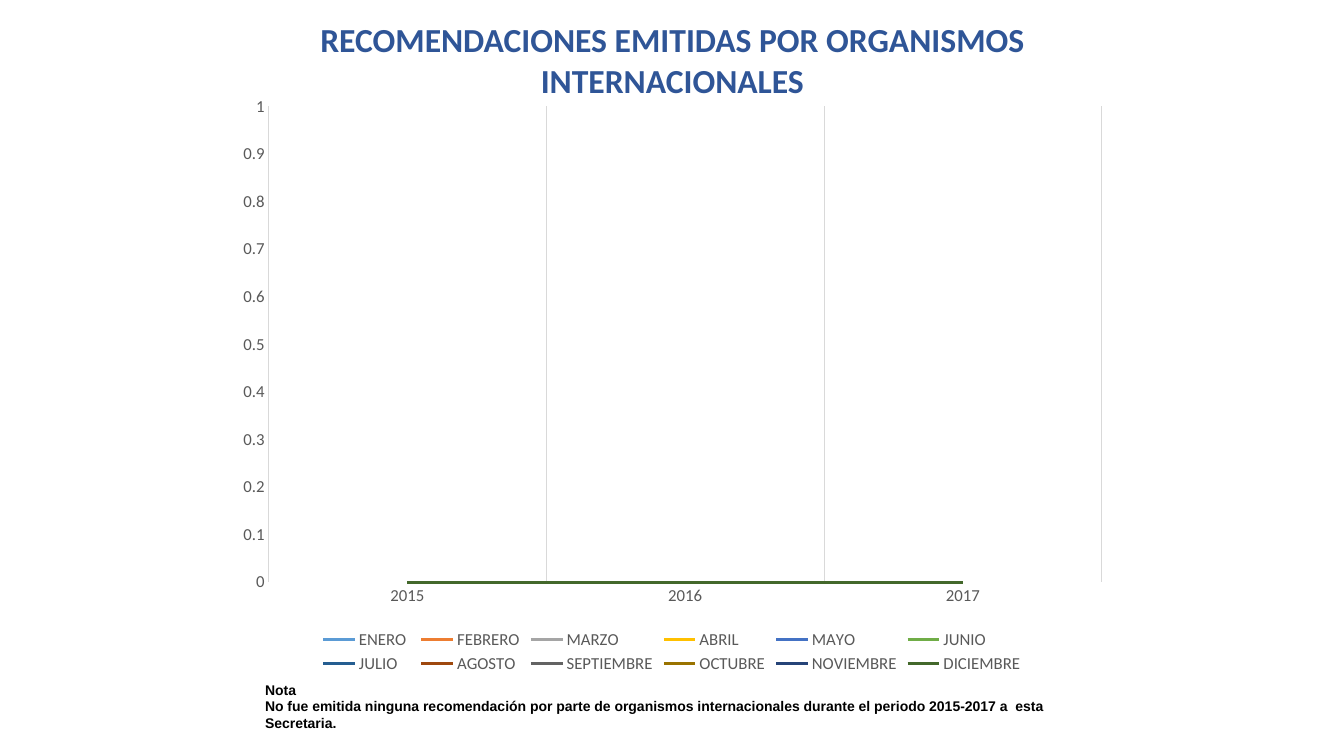
import pptx
import pptx.chart.data
import pptx.dml.color
import pptx.enum.chart
import pptx.enum.dml
import pptx.enum.text
import pptx.oxml
import pptx.oxml.ns
import pptx.util
from dataclasses import dataclass

Cm = pptx.util.Cm
Pt = pptx.util.Pt

YEARS = ["2015", "2016", "2017"]
MONTH_COLORS = {
    "ENERO ": "5B9BD5",
    "FEBRERO": "ED7D31",
    "MARZO": "A5A5A5",
    "ABRIL": "FFC000",
    "MAYO": "4472C4",
    "JUNIO": "70AD47",
    "JULIO": "255E91",
    "AGOSTO": "9E480E",
    "SEPTIEMBRE": "636363",
    "OCTUBRE": "997300",
    "NOVIEMBRE": "264478",
    "DICIEMBRE": "43682B",
}
MONTHS_WITH_2015 = ("OCTUBRE", "NOVIEMBRE", "DICIEMBRE")


@dataclass(frozen=True)
class Theme:
    heading_font: str = "Calibri"
    note_font: str = "Arial"
    title_color: str = "2F5597"
    note_color: str = "000000"
    label_color: str = "595959"
    grid_color: str = "D9D9D9"
    title_size: int = 24
    note_size: int = 10
    label_size: int = 12
    grid_width: float = 0.75
    series_width: float = 2.25


def rgb(color):
    return pptx.dml.color.RGBColor.from_string(color)


class SlideBuilder:
    """Holds the theme and the slide being filled."""

    def __init__(self, slide, theme):
        self.slide = slide
        self.theme = theme

    def style_font(self, font, name, size, color, bold=False):
        font.name = name
        font.size = Pt(size)
        font.bold = bold
        font.color.rgb = rgb(color)

    def style_label(self, font):
        theme = self.theme
        self.style_font(font, theme.heading_font, theme.label_size, theme.label_color)

    def style_line(self, line, color, width):
        line.color.rgb = rgb(color)
        line.width = Pt(width)

    def add_text(self, box, lines, font_name, size, color, alignment):
        shape = self.slide.shapes.add_textbox(*box)
        text_frame = shape.text_frame
        text_frame.word_wrap = True
        text_frame.auto_size = pptx.enum.text.MSO_AUTO_SIZE.SHAPE_TO_FIT_TEXT
        text_frame.text = "\n".join(lines)
        for paragraph in text_frame.paragraphs:
            paragraph.alignment = alignment
            for run in paragraph.runs:
                self.style_font(run.font, font_name, size, color, bold=True)

    def add_line_chart(self, box, categories, series_values, series_colors):
        chart_data = pptx.chart.data.CategoryChartData()
        chart_data.categories = categories
        for name, values in series_values.items():
            chart_data.add_series(name, values)
        chart = self.slide.shapes.add_chart(
            pptx.enum.chart.XL_CHART_TYPE.LINE, *box, chart_data).chart
        chart.has_title = False
        self.style_label(chart.font)
        for series in chart.plots[0].series:
            series.smooth = False
            series.marker.style = pptx.enum.chart.XL_MARKER_STYLE.NONE
            self.style_line(series.format.line, series_colors[series.name],
                            self.theme.series_width)
        self.style_axes(chart)
        chart.has_legend = True
        chart.legend.position = pptx.enum.chart.XL_LEGEND_POSITION.BOTTOM
        chart.legend.include_in_layout = False
        self.style_label(chart.legend.font)
        self.place_plot(chart, x=0.05, y=0.04, w=0.93, h=0.8)

    def style_axes(self, chart):
        theme = self.theme
        for axis in (chart.category_axis, chart.value_axis):
            axis.major_tick_mark = pptx.enum.chart.XL_TICK_MARK.NONE
            axis.minor_tick_mark = pptx.enum.chart.XL_TICK_MARK.NONE
            self.style_label(axis.tick_labels.font)
        chart.category_axis.format.line.fill.background()
        chart.category_axis.has_major_gridlines = True
        chart.value_axis.has_major_gridlines = False
        chart.value_axis.minimum_scale = 0
        chart.value_axis.maximum_scale = 1
        chart.value_axis.major_unit = 0.1
        for line in (chart.category_axis.major_gridlines.format.line,
                     chart.value_axis.format.line):
            self.style_line(line, theme.grid_color, theme.grid_width)

    def place_plot(self, chart, **fractions):
        """Fix the inner plot area as fractions of the chart frame."""
        plot_area = chart.element.chart.plotArea
        for layout in plot_area.findall(pptx.oxml.ns.qn("c:layout")):
            plot_area.remove(layout)
        places = "".join(f'<c:{key} val="{value}"/>' for key, value in fractions.items())
        plot_area.insert(0, pptx.oxml.parse_xml(
            f'<c:layout {pptx.oxml.ns.nsdecls("c")}><c:manualLayout>'
            '<c:layoutTarget val="inner"/><c:xMode val="edge"/><c:yMode val="edge"/>'
            f'{places}</c:manualLayout></c:layout>'))


def main():
    presentation = pptx.Presentation()
    presentation.slide_width = Cm(33.87)
    presentation.slide_height = Cm(19.05)
    slide = presentation.slides.add_slide(presentation.slide_layouts[6])
    theme = Theme()
    builder = SlideBuilder(slide, theme)

    values = {month: [0 if month in MONTHS_WITH_2015 else None, 0, 0]
              for month in MONTH_COLORS}
    builder.add_line_chart((Cm(5.64), Cm(2.08), Cm(22.58), Cm(14.99)),
                           YEARS, values, MONTH_COLORS)
    builder.add_text((Cm(6.43), Cm(0.36), Cm(21.03), Cm(2.31)),
                     ["RECOMENDACIONES EMITIDAS POR ORGANISMOS INTERNACIONALES"],
                     theme.heading_font, theme.title_size, theme.title_color,
                     pptx.enum.text.PP_ALIGN.CENTER)
    builder.add_text((Cm(6.43), Cm(17.04), Cm(21.31), Cm(1.55)),
                     ["Nota",
                      "No fue emitida ninguna recomendación por parte de organismos "
                      "internacionales durante el periodo 2015-2017 a  esta Secretaria."],
                     theme.note_font, theme.note_size, theme.note_color,
                     pptx.enum.text.PP_ALIGN.LEFT)
    presentation.save("out.pptx")


if __name__ == "__main__":
    main()
